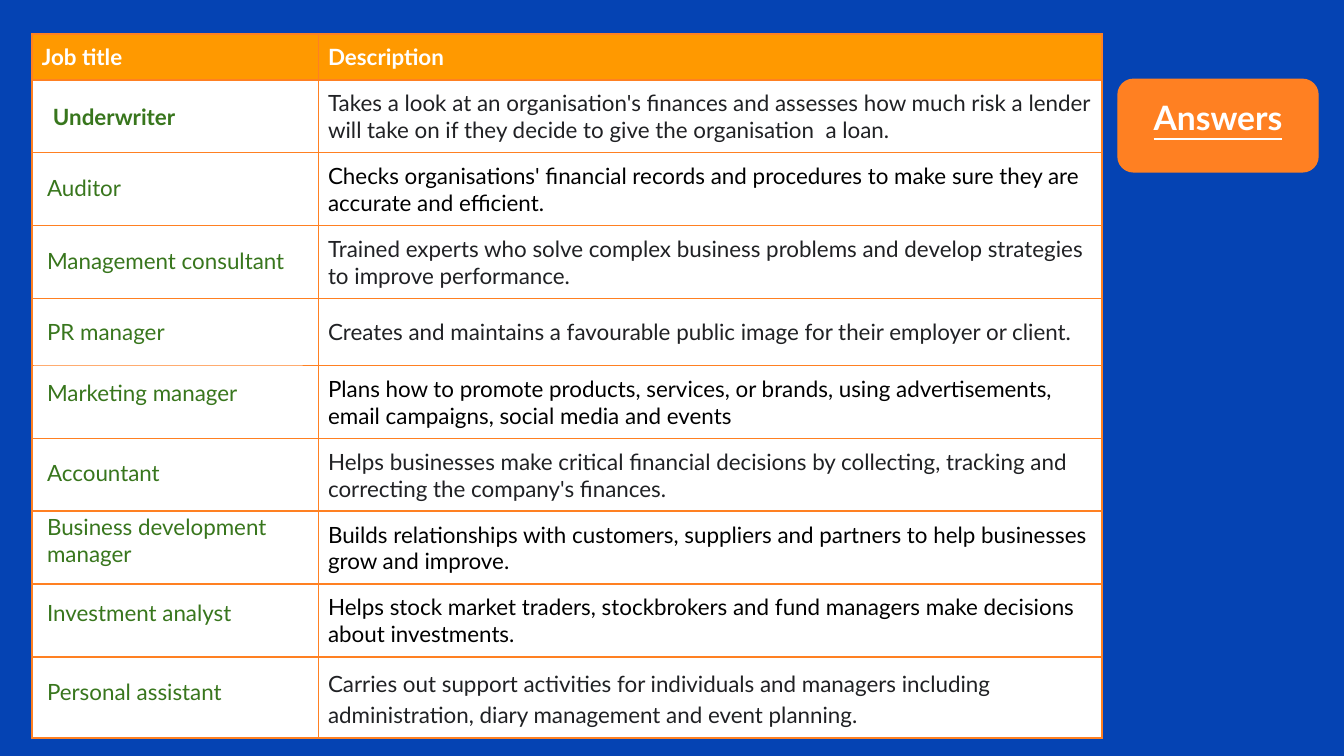
from lxml import etree
from pptx import Presentation
from pptx.dml.color import RGBColor
from pptx.enum.shapes import MSO_SHAPE
from pptx.enum.text import MSO_ANCHOR, MSO_AUTO_SIZE, PP_ALIGN
from pptx.oxml import parse_xml
from pptx.oxml.ns import nsdecls
from pptx.util import Cm, Pt

RECTANGLE = MSO_SHAPE.RECTANGLE
ROUNDED = MSO_SHAPE.ROUNDED_RECTANGLE
TOP, MIDDLE = MSO_ANCHOR.TOP, MSO_ANCHOR.MIDDLE
LEFT, CENTER = PP_ALIGN.LEFT, PP_ALIGN.CENTER
GROW = MSO_AUTO_SIZE.SHAPE_TO_FIT_TEXT

COLORS = {
    "background": "0543B3",
    "header": "FF9900",
    "orange": "FF8022",
    "white": "FFFFFF",
    "green": "38761D",
    "black": "000000",
    "dark": "202124",
}
COLUMN_WIDTHS = (5.41, 14.81)
ROW_HEIGHTS = (0.79, *[1.27] * 8, 1.4)

# Description, colour, line spacing
DESCRIPTIONS = [
    ("Takes a look at an organisation's finances and assesses how much risk a lender "
     "will take on if they decide to give the organisation  a loan.", "dark", None),
    ("Checks organisations' financial records and procedures to make sure they are "
     "accurate and efficient.", "black", None),
    ("Trained experts who solve complex business problems and develop strategies "
     "to improve performance.", "dark", None),
    ("Creates and maintains a favourable public image for their employer or client.",
     "dark", None),
    ("Plans how to promote products, services, or brands, using advertisements, "
     "email campaigns, social media and events", "black", None),
    ("Helps businesses make critical financial decisions by collecting, tracking and "
     "correcting the company's finances.", "dark", None),
    ("Builds relationships with customers, suppliers and partners to help businesses "
     "grow and improve.", "black", None),
    ("Helps stock market traders, stockbrokers and fund managers make decisions "
     "about investments.", "black", None),
    ("Carries out support activities for individuals and managers including "
     "administration, diary management and event planning.", "dark", 1.15),
]

# Job title, top, width, height, line spacing
JOB_LABELS = [
    ("Auditor", 3.05, 2.82, 1.02, None),
    ("Management consultant", 4.42, 5.31, 1.02, None),
    ("PR manager", 5.77, 5.08, 1.02, None),
    ("Marketing manager", 6.91, 5.08, 1.02, None),
    ("Accountant", 8.43, 5.08, 1.02, None),
    ("Business development manager", 9.45, 5.08, 1.55, None),
    ("Investment analyst", 11.07, 5.08, 1.02, None),
    ("Personal assistant", 12.5, 5.08, 1.02, 1.15),
]


def rgb(name):
    return RGBColor.from_string(COLORS[name])


def write_text(text_frame, text, color, size=12, bold=False, underline=False,
               align=LEFT, spacing=None):
    paragraph = text_frame.paragraphs[0]
    paragraph.alignment = align
    if spacing:
        paragraph.line_spacing = spacing
    run = paragraph.add_run()
    run.text = text
    font = run.font
    font.name, font.size = "Lato", Pt(size)
    font.bold, font.underline = bold, underline
    font.color.rgb = rgb(color)


def add_borders(cell, color, width):
    properties = cell._tc.get_or_add_tcPr()
    for index, side in enumerate(("lnL", "lnR", "lnT", "lnB")):
        line = parse_xml(f'<a:{side} {nsdecls("a")} w="{Pt(width)}"/>')
        fill = etree.SubElement(line, line.tag.replace(side, "solidFill"))
        etree.SubElement(fill, line.tag.replace(side, "srgbClr"), val=COLORS[color])
        properties.insert(index, line)


def add_job_table(slide, left, top):
    frame = slide.shapes.add_table(
        len(ROW_HEIGHTS), len(COLUMN_WIDTHS), Cm(left), Cm(top),
        Cm(sum(COLUMN_WIDTHS)), Cm(sum(ROW_HEIGHTS)))
    table = frame.table
    table.horz_banding = False
    for column, width in zip(table.columns, COLUMN_WIDTHS):
        column.width = Cm(width)
    for index, (row, height) in enumerate(zip(table.rows, ROW_HEIGHTS)):
        row.height = Cm(height)
        for cell in row.cells:
            cell.fill.solid()
            cell.fill.fore_color.rgb = rgb("white" if index else "header")
            cell.vertical_anchor = MIDDLE if index else TOP
            cell.margin_left = cell.margin_right = Cm(0.18)
            cell.margin_top = cell.margin_bottom = Cm(0.18)
            add_borders(cell, "orange", 1)

    for column, heading in enumerate(("Job title", "Description")):
        write_text(table.cell(0, column).text_frame, heading, "white", bold=True)
    first_job = table.cell(1, 0)
    first_job.margin_left = Cm(0.39)
    write_text(first_job.text_frame, "Underwriter", "green", bold=True)
    for row, (description, color, spacing) in enumerate(DESCRIPTIONS, start=1):
        write_text(table.cell(row, 1).text_frame, description, color, spacing=spacing)


def add_box(slide, kind, left, top, width, height, fill):
    """Add a plain filled shape whose text starts at the top."""
    shape = slide.shapes.add_shape(kind, Cm(left), Cm(top), Cm(width), Cm(height))
    shape.shadow.inherit = False
    shape.fill.solid()
    shape.fill.fore_color.rgb = rgb(fill)
    shape.line.fill.background()
    text_frame = shape.text_frame
    text_frame.word_wrap = True
    text_frame.vertical_anchor = TOP
    text_frame.margin_left = text_frame.margin_right = Cm(0.25)
    text_frame.margin_top = text_frame.margin_bottom = Cm(0.25)
    return shape


def add_job_labels(slide, left):
    for title, top, width, height, spacing in JOB_LABELS:
        label = add_box(slide, RECTANGLE, left, top, width, height, "white")
        if title in ("Management consultant", "Business development manager"):
            label.fill.background()
        label.text_frame.auto_size = GROW
        write_text(label.text_frame, title, "green", spacing=spacing)


def add_answers_badge(slide, left, top, width, height):
    badge = add_box(slide, ROUNDED, left, top, width, height, "orange")
    badge.line.color.rgb = rgb("orange")
    badge.line.width = Pt(0.75)
    write_text(badge.text_frame, "Answers", "white", size=18, bold=True,
               underline=True, align=CENTER)


def main():
    presentation = Presentation()
    presentation.slide_width, presentation.slide_height = Cm(25.4), Cm(14.29)
    slide = presentation.slides.add_slide(presentation.slide_layouts[6])
    slide.background.fill.solid()
    slide.background.fill.fore_color.rgb = rgb("background")
    add_job_table(slide, 0.61, 0.64)
    add_job_labels(slide, 0.64)
    add_answers_badge(slide, 21.13, 1.5, 3.78, 1.75)
    presentation.save("out.pptx")


if __name__ == "__main__":
    main()
